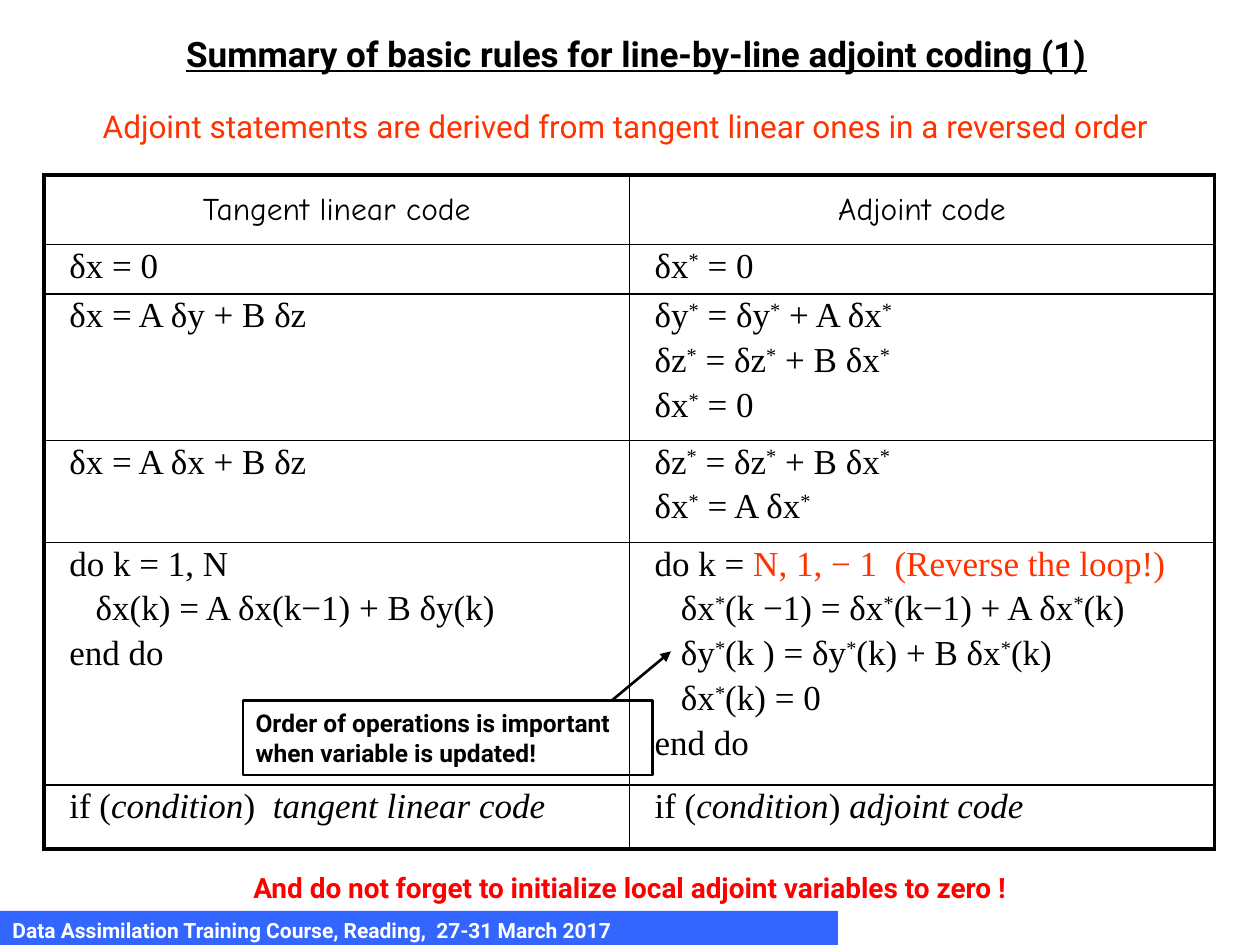
from dataclasses import dataclass
from lxml import etree
from pptx import Presentation, util as u
from pptx.dml.color import RGBColor
from pptx.enum import shapes, text
from pptx.oxml import ns

UNIT = 0.1  # inches per grid step: 100 columns by 75 rows


@dataclass(frozen=True)
class Theme:
    sans: str = "Roboto"
    serif: str = "Times New Roman"
    hand: str = "Comic Neue"
    black: str = "000000"
    white: str = "FFFFFF"
    red: str = "FF0000"
    orange: str = "FF3300"
    blue: str = "3366FF"
    code: int = 20
    head: int = 18
    note: int = 16
    tip: int = 14
    foot: int = 12
    gap: float = 3.4
    thick: float = 2.25
    thin: float = 1
    line: float = 1.5


T = Theme()

COLS = [46.45, 46.45]
ROWS = [5.5, 3.95, 11.6, 8.1, 19.25, 5.1]
HEADS = ["Tangent linear code", "Adjoint code"]
# In code lines: * is a superscript, _ toggles italics, # toggles colour, > indents
CODE = [
    (["δx = 0"], ["δx* = 0"]),
    (["δx = A δy + B δz"],
     ["δy* = δy* + A δx*", "δz* = δz* + B δx*", "δx* = 0"]),
    (["δx = A δx + B δz"], ["δz* = δz* + B δx*", "δx* = A δx*"]),
    (["do k = 1, N", ">δx(k) = A δx(k−1) + B δy(k)", "end do"],
     ["do k = #N, 1, − 1  (Reverse the loop!)#",
      ">δx*(k −1) = δx*(k−1) + A δx*(k)",
      ">δy*(k ) = δy*(k) + B δx*(k)",
      ">δx*(k) = 0", "end do"]),
    (["if (_condition_)  _tangent linear code_"],
     ["if (_condition_) _adjoint code_"]),
]


def size(n):
    return u.Inches(n * UNIT)


def place(box):
    return [size(n) for n in box]


def add_run(para, words, face, pts, hue, bold=False):
    run = para.add_run()
    run.text = words
    font = run.font
    font.name, font.size, font.bold = face, u.Pt(pts), bold
    font.color.rgb = RGBColor.from_string(hue)
    return run


def add_code(para, line):
    if line.startswith(">"):
        para._p.get_or_add_pPr().set("marL", str(u.Inches(0.21)))
        line = line[1:]
    for i, part in enumerate(line.split("#")):
        hue = T.orange if i % 2 else T.black
        for j, piece in enumerate(part.split("_")):
            for k, words in enumerate(piece.split("*")):
                if k:
                    star = add_run(para, "*", T.serif, T.code, hue)
                    star.font._element.set("baseline", "30000")
                if words:
                    run = add_run(para, words, T.serif, T.code, hue)
                    run.font.italic = bool(j % 2)


def fill_text(shape, lines, pts, hue, bold=True, wrap=True, align="LEFT"):
    frame = shape.text_frame
    frame.word_wrap = wrap
    frame.auto_size = text.MSO_AUTO_SIZE.SHAPE_TO_FIT_TEXT
    for i, line in enumerate(lines):
        para = frame.add_paragraph() if i else frame.paragraphs[0]
        para.alignment = text.PP_ALIGN[align]
        run = add_run(para, line, T.sans, pts, hue, bold)
    return run


def add_rect(slide, box):
    shape = slide.shapes.add_shape(shapes.MSO_SHAPE.RECTANGLE, *place(box))
    shape.shadow.inherit = False
    return shape


def add_label(slide, box, words, pts, hue, **look):
    return fill_text(slide.shapes.add_textbox(*place(box)), [words], pts, hue, **look)


def add_footer(slide, box):
    bar = add_rect(slide, box)
    bar.fill.solid()
    bar.fill.fore_color.rgb = RGBColor.from_string(T.blue)
    bar.line.fill.background()
    fill_text(bar, ["Data Assimilation Training Course, Reading,  27-31 March 2017"],
              T.foot, T.white)


def set_edges(cell, row, col):
    outer = {"L": col == 0, "R": col == len(COLS) - 1,
             "T": row == 0, "B": row == len(ROWS) - 1}
    props = cell._tc.get_or_add_tcPr()
    for side, far in outer.items():
        wide = u.Pt(T.thick if far else T.thin)
        edge = etree.SubElement(props, ns.qn(f"a:ln{side}"), w=str(wide))
        fill = etree.SubElement(edge, ns.qn("a:solidFill"))
        etree.SubElement(fill, ns.qn("a:srgbClr"), val=T.black)


def fill_cell(cell, row, col):
    set_edges(cell, row, col)
    cell.fill.background()
    para = cell.text_frame.paragraphs[0]
    if row == 0:
        cell.vertical_anchor = text.MSO_ANCHOR.MIDDLE
        para.alignment = text.PP_ALIGN.CENTER
        add_run(para, HEADS[col], T.hand, T.head, T.black)
        return
    cell.margin_left = size(2)
    cell.margin_top = cell.margin_bottom = size(0.2)
    for i, line in enumerate(CODE[row - 1][col]):
        if i:
            para = cell.text_frame.add_paragraph()
            para.space_before = u.Pt(T.gap)
        add_code(para, line)


def add_rules(slide, left, top):
    box = (left, top, sum(COLS), sum(ROWS))
    table = slide.shapes.add_table(len(ROWS), len(COLS), *place(box)).table
    table.first_row = table.horz_banding = False
    for col, wide in enumerate(COLS):
        table.columns[col].width = size(wide)
    for row, high in enumerate(ROWS):
        table.rows[row].height = size(high)
        for col in range(len(COLS)):
            fill_cell(table.cell(row, col), row, col)


def add_tip(slide, box):
    left, top, wide, _ = box
    # Arrow from the top edge of the frame to the updated line
    start = left + 0.9 * wide
    arrow = slide.shapes.add_connector(
        shapes.MSO_CONNECTOR.STRAIGHT,
        *place((start, top, start + 4.7, top - 3.9)))
    arrow.line.width = u.Pt(T.line)
    arrow.line.color.rgb = RGBColor.from_string(T.black)
    etree.SubElement(arrow.line._get_or_add_ln(), ns.qn("a:tailEnd"), type="triangle")
    etree.SubElement(arrow._element.spPr, ns.qn("a:effectLst"))
    # Frame
    frame = add_rect(slide, box)
    frame.fill.background()
    frame.line.width = u.Pt(T.line)
    frame.line.color.rgb = RGBColor.from_string(T.black)
    fill_text(frame, ["Order of operations is important", "when variable is updated!"],
              T.tip, T.black, wrap=False)


def main():
    deck = Presentation()
    deck.slide_width, deck.slide_height = size(100), size(75)
    slide = deck.slides.add_slide(deck.slide_layouts[6])
    add_footer(slide, (0, 72.3, 66.5, 3))
    add_rules(slide, 3.5, 13.9)
    # Title
    title = add_label(slide, (13.8, 2.1, 77, 4.3),
                      "Summary of basic rules for line-by-line adjoint coding (1)",
                      T.code, T.black, wrap=False)
    title.font.underline = True
    # Closing reminder and opening statement
    add_label(slide, (6.7, 68.6, 86.6, 3.7),
              "And do not forget to initialize local adjoint variables to zero !",
              T.note, T.red, align="CENTER")
    add_label(slide, (1.2, 8, 96.9, 4),
              "Adjoint statements are derived from tangent linear ones in a reversed order",
              T.head, T.orange, bold=False, align="CENTER")
    add_tip(slide, (19.3, 55.6, 32.5, 5.9))
    deck.save("out.pptx")


if __name__ == "__main__":
    main()
